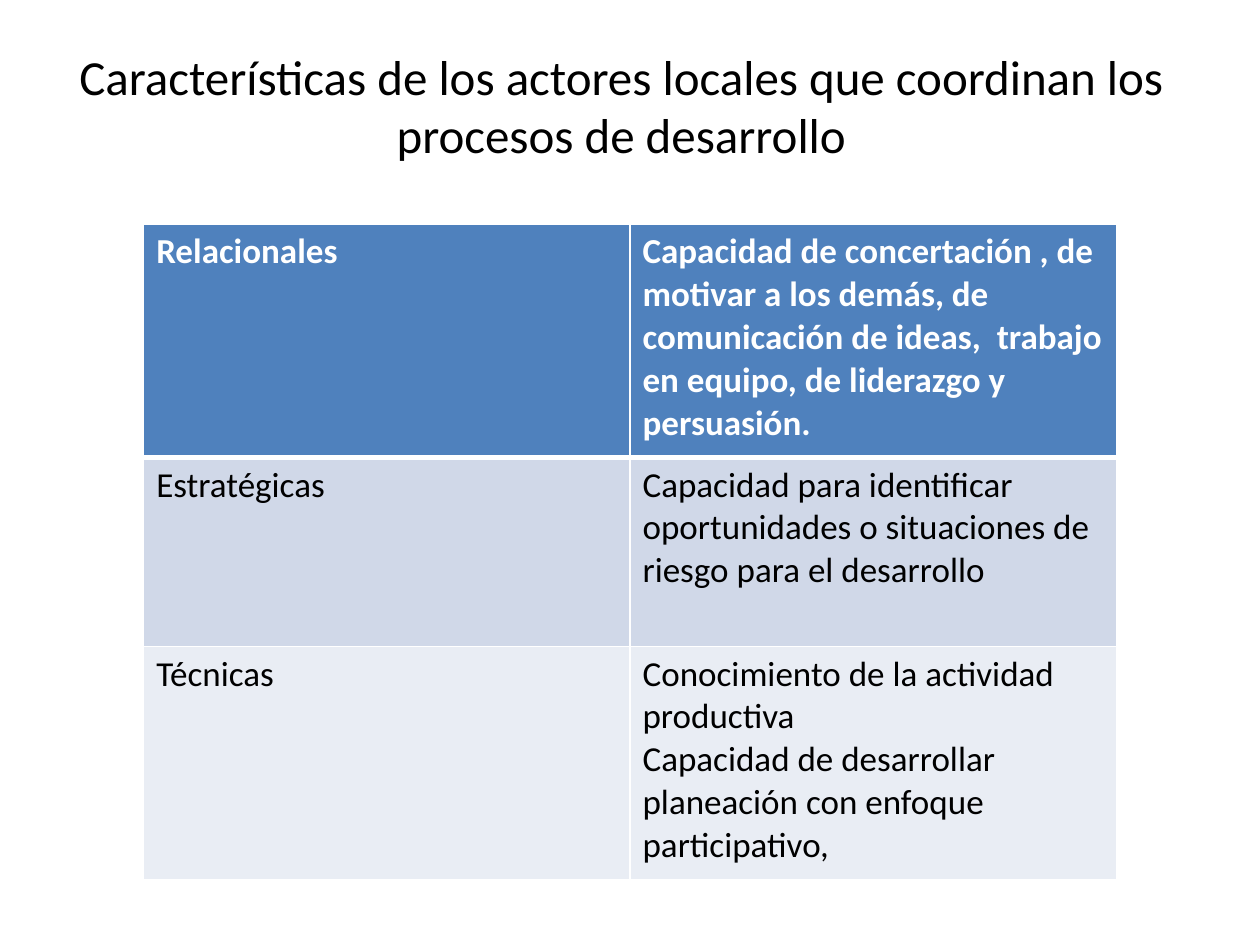
from dataclasses import dataclass

from lxml import etree
from pptx import Presentation
from pptx.dml.color import RGBColor
from pptx.enum.text import MSO_ANCHOR, PP_ALIGN
from pptx.oxml.ns import qn
from pptx.util import Pt

CENTER, LEFT = PP_ALIGN.CENTER, PP_ALIGN.LEFT
MIDDLE = MSO_ANCHOR.MIDDLE
TITLE_ONLY = 5


@dataclass(frozen=True)
class Theme:
    """Colours, font and type sizes of the slide."""
    font: str = "Calibri"
    title_size: int = 28
    cell_size: int = 20
    text: str = "000000"
    white: str = "FFFFFF"
    header: str = "4F81BD"
    bands: tuple = ("D0D8E8", "E9EDF4")
    rule: int = 1
    header_rule: int = 3


THEME = Theme()
TITLE = "Características de los actores locales que coordinan los procesos de desarrollo"
ROWS = [
    ("Relacionales",
     "Capacidad de concertación , de motivar a los demás, de comunicación de ideas,  "
     "trabajo en equipo, de liderazgo y persuasión."),
    ("Estratégicas",
     "Capacidad para identificar oportunidades o situaciones de riesgo para el desarrollo"),
    ("Técnicas",
     "Conocimiento de la actividad productiva\n"
     "Capacidad de desarrollar planeación con enfoque participativo,"),
]
ROW_HEIGHTS = (133.2, 108, 133.2)
COLUMN_WIDTH = 277.92


def write(tf, text, size, color=THEME.text, bold=False, align=LEFT):
    """Fill a text frame with one formatted paragraph per line of text."""
    for i, line in enumerate(text.split("\n")):
        p = tf.add_paragraph() if i else tf.paragraphs[0]
        p.alignment = align
        r = p.add_run()
        r.text = line
        r.font.name, r.font.size, r.font.bold = THEME.font, Pt(size), bold
        r.font.color.rgb = RGBColor.from_string(color)


def add_title(s, text):
    """Place and fill the title placeholder."""
    sp = s.shapes.title
    sp.left, sp.top, sp.width, sp.height = Pt(31), Pt(15), Pt(648), Pt(90)
    sp.text_frame.vertical_anchor = MIDDLE
    write(sp.text_frame, text, THEME.title_size, align=CENTER)


def set_borders(cell, **widths):
    """Draw white cell borders, with widths in points keyed by L, R, T and B."""
    tcPr = cell._tc.get_or_add_tcPr()
    for side, width in widths.items():
        ln = etree.SubElement(tcPr, qn(f"a:ln{side}"), w=str(Pt(width)))
        fill = etree.SubElement(ln, qn("a:solidFill"))
        etree.SubElement(fill, qn("a:srgbClr"), val=THEME.white)


def format_cell(cell, text, row):
    """Write one cell and style it by its row."""
    is_header = row == 0
    set_borders(cell, L=THEME.rule, R=THEME.rule,
                T=THEME.header_rule if row == 1 else THEME.rule,
                B=THEME.header_rule if is_header else THEME.rule)
    cell.fill.solid()
    color = THEME.header if is_header else THEME.bands[(row - 1) % 2]
    cell.fill.fore_color.rgb = RGBColor.from_string(color)
    write(cell.text_frame, text, THEME.cell_size,
          color=THEME.white if is_header else THEME.text, bold=is_header)


def add_traits_table(s, rows):
    """Add the table of actor traits."""
    columns = len(rows[0])
    table = s.shapes.add_table(len(rows), columns, Pt(82.08), Pt(128.16),
                               Pt(columns * COLUMN_WIDTH), Pt(sum(ROW_HEIGHTS))).table
    for i, (texts, height) in enumerate(zip(rows, ROW_HEIGHTS)):
        table.rows[i].height = Pt(height)
        for j, text in enumerate(texts):
            format_cell(table.cell(i, j), text, i)


def main():
    """Build and save the slide."""
    prs = Presentation()
    prs.slide_width, prs.slide_height = Pt(720), Pt(540)
    s = prs.slides.add_slide(prs.slide_layouts[TITLE_ONLY])
    add_title(s, TITLE)
    add_traits_table(s, ROWS)
    prs.save("out.pptx")


if __name__ == "__main__":
    main()
